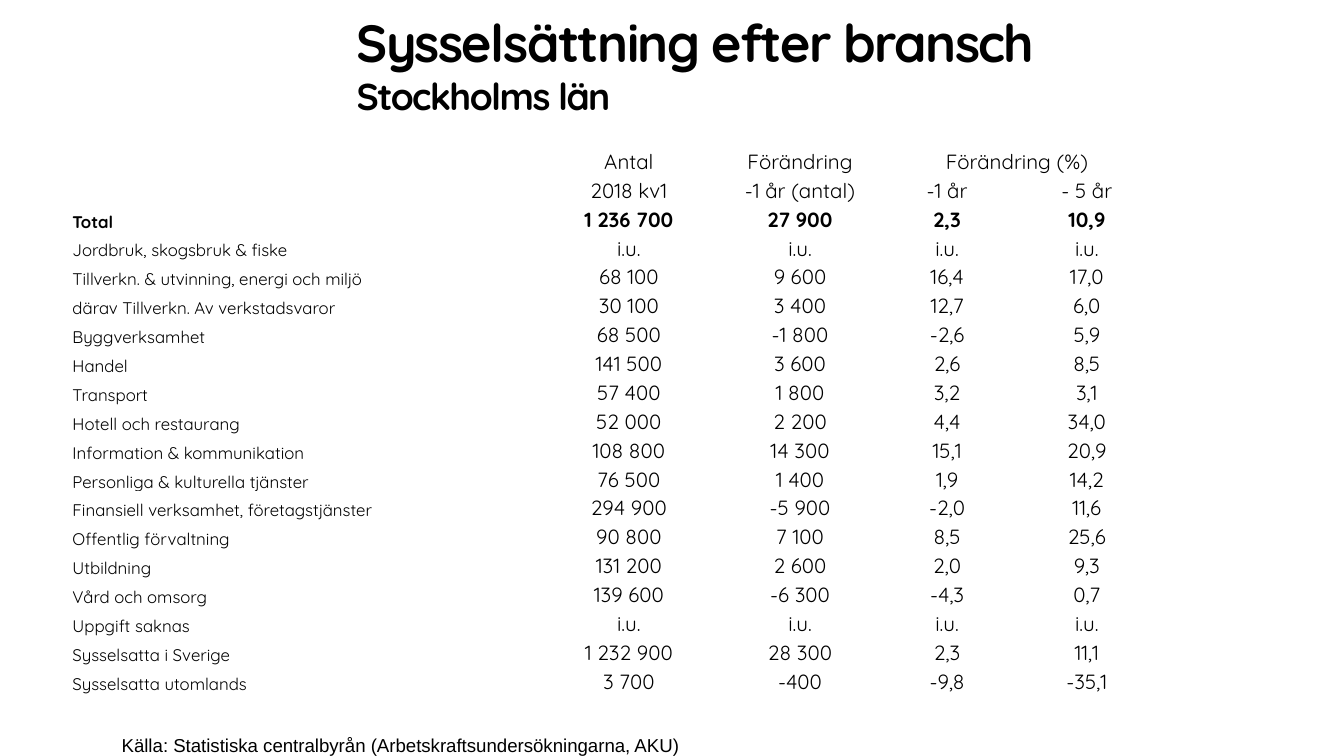
from lxml.etree import SubElement
from pptx import Presentation
from pptx.dml.color import RGBColor
from pptx.enum.text import MSO_ANCHOR, PP_ALIGN
from pptx.oxml.ns import qn
from pptx.util import Cm, Pt

COLORS = {"text": "000000"}
HEADING_FONT, SOURCE_FONT = "Quicksand", "Arial"
LABEL_SIZE, VALUE_SIZE = 9, 11

COLUMN_WIDTHS = [8.76, 3.55, 2.92, 2.64, 2.64]
HEADER_HEIGHT = 0.57
ROWS = [
    ["", "Antal", "Förändring", "Förändring (%)", ""],
    ["", "2018 kv1", "-1 år (antal)", "-1 år", "- 5 år"],
    ["Total", "1 236 700", "27 900", "2,3", "10,9"],
    ["Jordbruk, skogsbruk & fiske", "i.u.", "i.u.", "i.u.", "i.u."],
    ["Tillverkn. & utvinning, energi och miljö", "68 100", "9 600", "16,4", "17,0"],
    ["därav Tillverkn. Av verkstadsvaror", "30 100", "3 400", "12,7", "6,0"],
    ["Byggverksamhet", "68 500", "-1 800", "-2,6", "5,9"],
    ["Handel", "141 500", "3 600", "2,6", "8,5"],
    ["Transport", "57 400", "1 800", "3,2", "3,1"],
    ["Hotell och restaurang", "52 000", "2 200", "4,4", "34,0"],
    ["Information & kommunikation", "108 800", "14 300", "15,1", "20,9"],
    ["Personliga & kulturella tjänster", "76 500", "1 400", "1,9", "14,2"],
    ["Finansiell verksamhet, företagstjänster", "294 900", "-5 900", "-2,0", "11,6"],
    ["Offentlig förvaltning", "90 800", "7 100", "8,5", "25,6"],
    ["Utbildning", "131 200", "2 600", "2,0", "9,3"],
    ["Vård och omsorg", "139 600", "-6 300", "-4,3", "0,7"],
    ["Uppgift saknas", "i.u.", "i.u.", "i.u.", "i.u."],
    ["Sysselsatta i Sverige", "1 232 900", "28 300", "2,3", "11,1"],
    ["Sysselsatta utomlands", "3 700", "-400", "-9,8", "-35,1"],
]


def set_attributes(target, values):
    for name, value in values.items():
        setattr(target, name, value)


def write(p, text, size, font=HEADING_FONT, bold=False):
    """Add a formatted run to the paragraph, or size the paragraph if it is empty."""
    if not text:
        SubElement(p._p, qn("a:endParaRPr"), sz=str(size * 100))
        return None
    r = p.add_run()
    r.text = text
    set_attributes(r.font, {"size": Pt(size), "name": font, "bold": bold})
    r.font.color.rgb = RGBColor.from_string(COLORS["text"])
    return r


def add_text_frame(s, box):
    tf = s.shapes.add_textbox(*map(Cm, box)).text_frame
    set_attributes(tf, {"word_wrap": True, "margin_left": 0, "margin_right": 0,
                        "margin_top": 0, "margin_bottom": 0})
    return tf


def add_heading(s, box):
    tf = add_text_frame(s, box)
    title, subtitle = tf.paragraphs[0], tf.add_paragraph()
    for p, text, size in [(title, "Sysselsättning efter bransch", 28),
                          (subtitle, "Stockholms län", 20)]:
        r = write(p, text, size, bold=True)
        r.font._element.set("spc", "-86")


def add_employment_table(s, box):
    table = s.shapes.add_table(len(ROWS), len(COLUMN_WIDTHS), *map(Cm, box)).table
    set_attributes(table, {"first_row": False, "horz_banding": False})
    for column, width in zip(table.columns, COLUMN_WIDTHS):
        column.width = Cm(width)
    body_height = (box[3] - HEADER_HEIGHT) / (len(ROWS) - 1)
    for i, values in enumerate(ROWS):
        table.rows[i].height = Cm(body_height if i else HEADER_HEIGHT)
        for j, text in enumerate(values):
            cell = table.cell(i, j)
            cell.fill.background()
            set_attributes(cell, {"vertical_anchor": MSO_ANCHOR.BOTTOM,
                                  "margin_left": Cm(0.02), "margin_right": Cm(0.02),
                                  "margin_top": Cm(0.02), "margin_bottom": 0})
            p = cell.text_frame.paragraphs[0]
            p.alignment = PP_ALIGN.CENTER if j else PP_ALIGN.LEFT
            write(p, text, VALUE_SIZE if j else LABEL_SIZE, bold=values[0] == "Total")
    table.cell(0, 3).merge(table.cell(0, 4))


def add_source_line(s, box):
    p = add_text_frame(s, box).paragraphs[0]
    p.line_spacing = Pt(24)
    write(p, "Källa: Statistiska centralbyrån (Arbetskraftsundersökningarna, AKU)",
          10, SOURCE_FONT)


def main():
    prs = Presentation()
    set_attributes(prs, {"slide_width": Cm(25.4), "slide_height": Cm(14.29)})
    s = prs.slides.add_slide(prs.slide_layouts[6])
    add_source_line(s, (2.3, 13.45, 11.5, 0.84))
    add_employment_table(s, (1.35, 2.73, sum(COLUMN_WIDTHS), 10.41))
    add_heading(s, (6.74, 0.2, 17.25, 2.03))
    prs.save("out.pptx")


if __name__ == "__main__":
    main()
